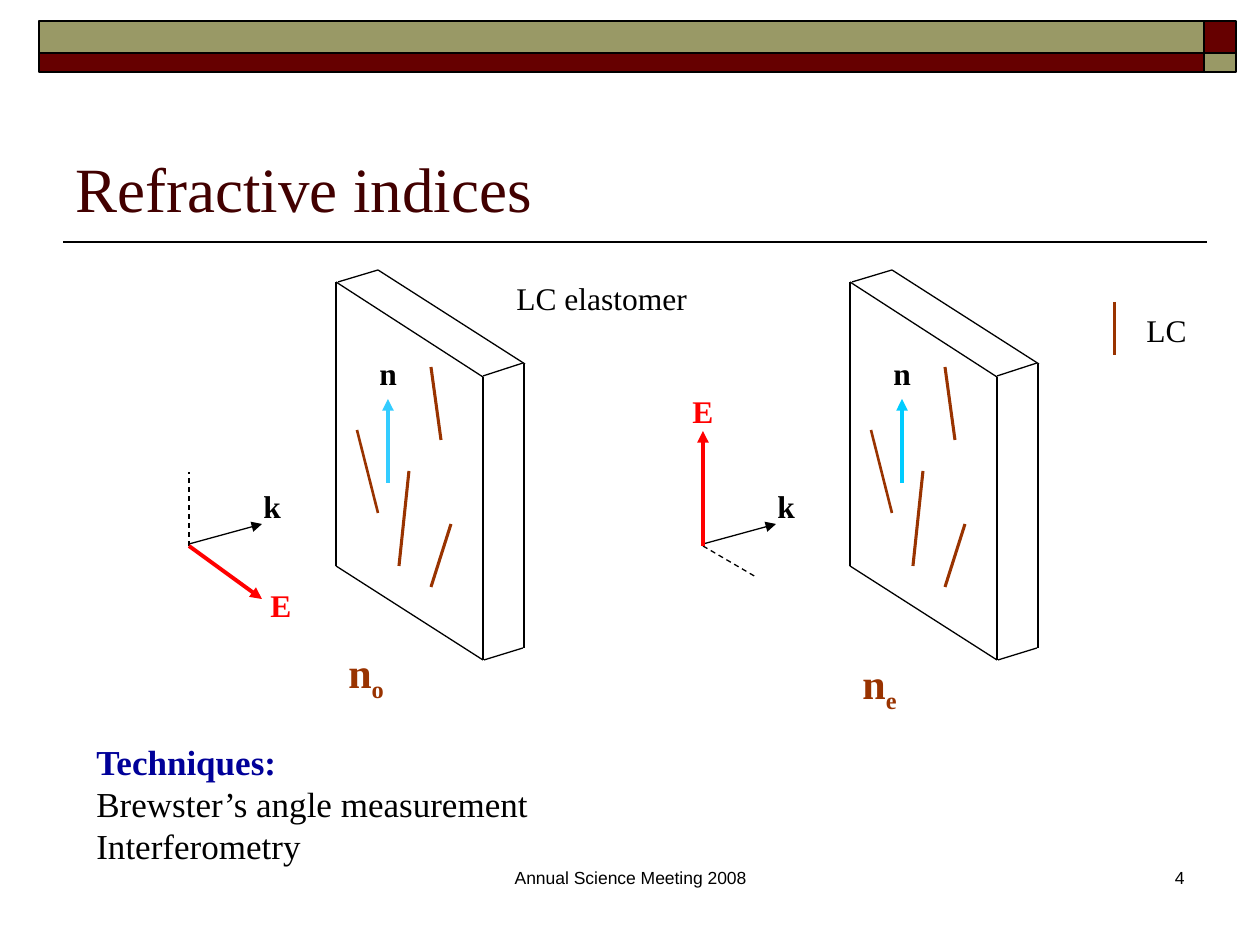
"""Build the slide on refractive indices of a liquid crystal elastomer."""
from pptx import Presentation
from pptx import util as u
from pptx.dml.color import RGBColor
from pptx.enum import dml, shapes, text
from pptx.oxml import ns, xmlchemy

PX = 914400 / 126
BLACK = RGBColor(0, 0, 0)
MAROON = RGBColor(0x66, 0, 0)
OLIVE = RGBColor(0x99, 0x99, 0x66)
WINE = RGBColor(0x42, 0, 0)
RUST = RGBColor(0x99, 0x33, 0)
RED = RGBColor(0xFF, 0, 0)
NAVY = RGBColor(0, 0, 0x99)
SKY = RGBColor(0x33, 0xCC, 0xFF)
CYAN = RGBColor(0, 0xCC, 0xFF)
SERIF = "Times New Roman"
LEFT, MID, RIGHT = text.PP_ALIGN.LEFT, text.PP_ALIGN.CENTER, text.PP_ALIGN.RIGHT

deck = Presentation()
deck.slide_width, deck.slide_height = u.Inches(10), u.Inches(7.5)
slide = deck.slides.add_slide(deck.slide_layouts[5])


def draw(ends, color=BLACK, width=0.75, arrow=False, dash=False):
    line = slide.shapes.add_connector(
        shapes.MSO_CONNECTOR.STRAIGHT, *[round(v * PX) for v in ends])
    line.line.color.rgb = color
    line.line.width = u.Pt(width)
    if dash:
        line.line.dash_style = dml.MSO_LINE.DASH
    props = line._element.spPr
    if arrow:
        tip = xmlchemy.OxmlElement("a:tailEnd")
        tip.set("type", "triangle")
        props.find(ns.qn("a:ln")).append(tip)
    props.append(xmlchemy.OxmlElement("a:effectLst"))


def write(box, lines, size, font=SERIF, align=LEFT, wrap=False):
    frame = slide.shapes.add_textbox(*[round(v * PX) for v in box]).text_frame
    frame.word_wrap = wrap
    for i, runs in enumerate(lines):
        para = frame.add_paragraph() if i else frame.paragraphs[0]
        para.alignment = align
        for words, color, bold, base in runs:
            run = para.add_run()
            run.text = words
            run.font.name, run.font.size = font, u.Pt(size)
            run.font.bold, run.font.color.rgb = bold, color
            if base:
                run.font._element.set("baseline", str(base * 1000))


draw((1207, 242, 63, 242), width=1)
for x, y, w, h, color in [
    (1204, 21, 32, 32, MAROON), (39, 21, 1165, 32, OLIVE),
    (39, 53, 1165, 19, MAROON), (1204, 53, 32, 19, OLIVE),
]:
    bar = slide.shapes.add_shape(
        shapes.MSO_SHAPE.RECTANGLE, *[round(v * PX) for v in (x, y, w, h)])
    bar.shadow.inherit = False
    bar.fill.solid()
    bar.fill.fore_color.rgb = color
    bar.line.color.rgb = BLACK
    bar.line.width = u.Pt(1)

title = slide.shapes.title
title.left, title.top, title.width, title.height = [
    round(v * PX) for v in (63, 73, 1134, 158)]
title.text_frame.vertical_anchor = text.MSO_ANCHOR.BOTTOM
para = title.text_frame.paragraphs[0]
para.alignment = LEFT
run = para.add_run()
run.text = "Refractive indices"
run.font.name, run.font.size = SERIF, u.Pt(36)
run.font.color.rgb = WINE

write((431, 861, 399, 63), [[("Annual Science Meeting 2008", BLACK, False, 0)]],
      10, "Arial", MID, True)
write((935, 861, 262, 63), [[("4", BLACK, False, 0)]], 10, "Arial", RIGHT, True)

edges = [
    (336, 282, 336, 566), (483, 377, 483, 660), (336, 282, 483, 377),
    (336, 566, 483, 660), (378, 270, 525, 364), (523, 648, 484, 660),
    (524, 364, 524, 648), (523, 363, 483, 376), (378, 270, 338, 282),
]
rods = [
    (431, 587, 451, 524, 1.75), (378, 513, 357, 430, 1.5),
    (441, 440, 431, 367, 1.75), (399, 566, 409, 471, 1.75),
]
views = [
    (0, SKY, (189, 546, 262, 599), (189, 546, 189, 472), (258, 580), "o", 640),
    (514, CYAN, (703, 546, 703, 431), (703, 546, 756, 577), (680, 386), "e", 651),
]
for dx, blue, field, axis, spot, sub, low in views:
    for x, y, right, end in edges:
        draw((x + dx, y, right + dx, end))
    draw(axis, dash=True)
    draw((189 + dx, 544, 262 + dx, 524), arrow=True)
    draw((388 + dx, 483, 388 + dx, 399), blue, 2.25, True)
    for x, y, right, end, width in rods:
        draw((x + dx, y, right + dx, end), RUST, width)
    draw(field, RED, 2.25, True)
    write((*spot, 73, 50), [[("E", RED, True, 0)]], 18, wrap=True)
    for name, x, y in [("k", 251, 481), ("n", 367, 348)]:
        write((x + dx, y, 43, 50), [[(name, BLACK, True, 0)]], 18)
    write((336 + dx, low, 84, 63), [[("n", RUST, True, 0), (sub, RUST, True, -25)]],
          24, wrap=True)

draw((1115, 302, 1115, 355), RUST, 1.75)
write((1134, 305, 66, 50), [[("LC", BLACK, False, 0)]], 18)
write((504, 273, 197, 50), [[("LC elastomer", BLACK, False, 0)]], 18)
write((84, 734, 630, 139), [
    [("Techniques:", NAVY, True, 0)],
    [("Brewster’s angle measurement", BLACK, False, 0)],
    [("Interferometry", BLACK, False, 0)],
], 20, wrap=True)

deck.save("out.pptx")
